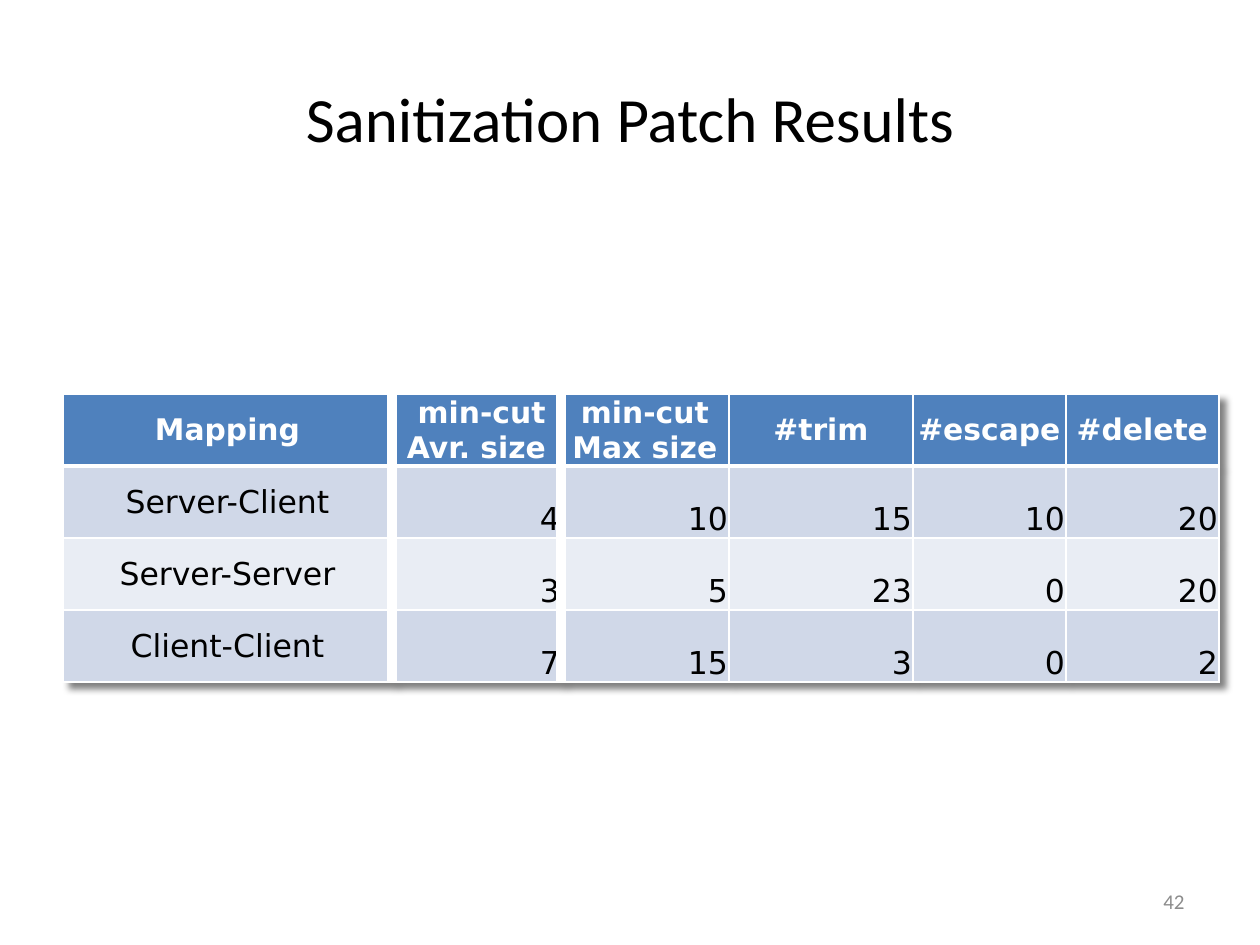
"""Build the slide of sanitization patch results."""
import dataclasses
import typing

import lxml.etree
import pptx
import pptx.dml.color
import pptx.enum.text
import pptx.oxml.ns
import pptx.util

EMU_PER_PX = 914400 / 126
COLORS = {
    "text": "000000",
    "inverse": "FFFFFF",
    "header": "4F81BD",
    "odd_row": "D0D8E8",
    "even_row": "E9EDF4",
    "page_number": "8C8C8C",
}
ALIGN = pptx.enum.text.PP_ALIGN
ANCHOR = pptx.enum.text.MSO_ANCHOR


@dataclasses.dataclass(frozen=True)
class TextStyle:
    font: str
    size: int
    color: str
    align: ALIGN
    anchor: ANCHOR = ANCHOR.MIDDLE
    bold: bool = False


@dataclasses.dataclass(frozen=True)
class Column:
    heading: str
    width: int
    style: TextStyle
    values: tuple[str, ...]


TITLE = TextStyle("Calibri", 36, "text", ALIGN.CENTER)
PAGE_NUMBER = TextStyle("Calibri", 12, "page_number", ALIGN.RIGHT)
HEADING = TextStyle("DejaVu Sans", 17, "inverse", ALIGN.CENTER, bold=True)
MAPPING = TextStyle("DejaVu Sans", 18, "text", ALIGN.CENTER)
NUMBER = TextStyle("DejaVu Sans", 18, "text", ALIGN.RIGHT, ANCHOR.BOTTOM)

COLUMNS = (
    Column("Mapping", 329, MAPPING, ("Server-Client", "Server-Server", "Client-Client")),
    Column(" min-cut\nAvr. size", 169, NUMBER, ("4", "3", "7")),
    Column("min-cut\nMax size", 168, NUMBER, ("10", "5", "15")),
    Column("#trim", 184, NUMBER, ("15", "23", "3")),
    Column("#escape", 153, NUMBER, ("10", "0", "0")),
    Column("#delete", 153, NUMBER, ("20", "20", "2")),
)
ROW_FILLS = ("header", "odd_row", "even_row", "odd_row")
ROW_HEIGHT = 72
THICK_DIVIDERS = (1, 2)


def px(length: int) -> int:
    """Turn px into EMU."""
    return round(length * EMU_PER_PX)


def rgb(name: str) -> pptx.dml.color.RGBColor:
    """Look up a named colour."""
    return pptx.dml.color.RGBColor.from_string(COLORS[name])


def set_all(target: typing.Any, values: dict[str, typing.Any]) -> None:
    """Set every attribute in values on target."""
    for name, value in values.items():
        setattr(target, name, value)


def write_text(frame: typing.Any, text: str, style: TextStyle) -> None:
    """Fill a text frame with styled paragraphs."""
    frame.text = text
    for paragraph in frame.paragraphs:
        paragraph.alignment = style.align
        for run in paragraph.runs:
            set_all(run.font, {
                "name": style.font,
                "size": pptx.util.Pt(style.size),
                "bold": style.bold,
            })
            run.font.color.rgb = rgb(style.color)


def add_child(parent: typing.Any, tag: str, **attributes: str) -> typing.Any:
    """Append a DrawingML element."""
    return lxml.etree.SubElement(parent, pptx.oxml.ns.qn(tag), attributes)


def draw_borders(cell: typing.Any, widths: dict[str, int]) -> None:
    """Give a cell white borders of the given point widths."""
    properties = cell._tc.get_or_add_tcPr()
    for position, (side, width) in enumerate(widths.items()):
        line = add_child(properties, f"a:ln{side}", w=str(pptx.util.Pt(width)))
        add_child(add_child(line, "a:solidFill"), "a:srgbClr", val=COLORS["inverse"])
        properties.insert(position, line)


def draw_cell(cell: typing.Any, text: str, style: TextStyle, row: int, column: int) -> None:
    """Write and format one table cell."""
    set_all(cell, {
        "margin_left": px(1),
        "margin_right": px(1),
        "margin_top": px(1),
        "margin_bottom": 0,
        "vertical_anchor": style.anchor,
    })
    write_text(cell.text_frame, text, style)
    cell.fill.solid()
    cell.fill.fore_color.rgb = rgb(ROW_FILLS[row])
    draw_borders(cell, {
        "L": 6 if column in THICK_DIVIDERS else 1,
        "R": 6 if column + 1 in THICK_DIVIDERS else 1,
        "T": 1,
        "B": 3 if row == 0 else 1,
    })


def draw_shadow(table: typing.Any) -> None:
    """Cast a soft shadow to the lower right of the table."""
    effects = add_child(table._tbl.tblPr, "a:effectLst")
    table._tbl.tblPr.insert(0, effects)
    shadow = add_child(effects, "a:outerShdw", blurRad="50800", dist="63500",
                       dir="2700000", algn="tl", rotWithShape="0")
    add_child(add_child(shadow, "a:srgbClr", val=COLORS["text"]), "a:alpha", val="50000")


def draw_results(slide: typing.Any) -> None:
    """Add the table of patch results."""
    results = slide.shapes.add_table(
        len(ROW_FILLS), len(COLUMNS), px(63), px(394),
        px(sum(column.width for column in COLUMNS)), px(ROW_HEIGHT * len(ROW_FILLS)),
    ).table
    for row in results.rows:
        row.height = px(ROW_HEIGHT)
    for index, column in enumerate(COLUMNS):
        results.columns[index].width = px(column.width)
        for row, text in enumerate((column.heading, *column.values)):
            style = HEADING if row == 0 else column.style
            draw_cell(results.cell(row, index), text, style, row, index)
    draw_shadow(results)


def main() -> None:
    """Build and save the presentation."""
    deck = pptx.Presentation()
    set_all(deck, {"slide_width": px(1260), "slide_height": px(945)})
    slide = deck.slides.add_slide(deck.slide_layouts[5])

    title = slide.shapes.title
    set_all(title, {"left": px(63), "top": px(38), "width": px(1134), "height": px(158)})
    write_text(title.text_frame, "Sanitization Patch Results", TITLE)
    title.text_frame.vertical_anchor = TITLE.anchor

    draw_results(slide)

    page_number = slide.shapes.add_textbox(px(903), px(876), px(294), px(50)).text_frame
    set_all(page_number, {"word_wrap": True, "vertical_anchor": PAGE_NUMBER.anchor})
    write_text(page_number, "42", PAGE_NUMBER)
    deck.save("out.pptx")


if __name__ == "__main__":
    main()
